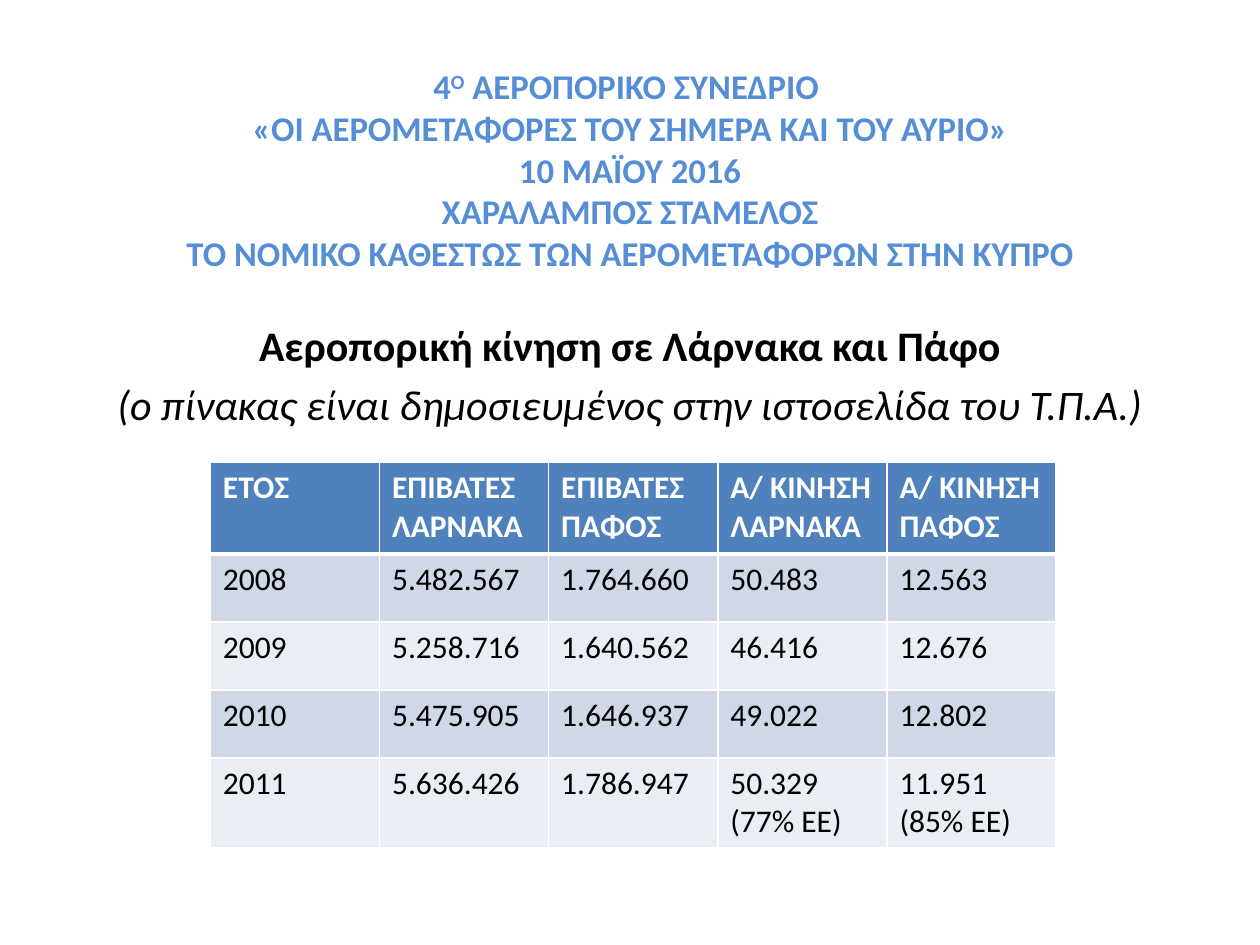
from lxml import etree
from pptx import Presentation
from pptx.dml.color import RGBColor
from pptx.enum.text import MSO_ANCHOR, MSO_AUTO_SIZE, PP_ALIGN
from pptx.oxml.ns import qn
from pptx.util import Cm, Pt

CENTER = PP_ALIGN.CENTER
NO_FIT = MSO_AUTO_SIZE.NONE
TOP, BOTTOM = MSO_ANCHOR.TOP, MSO_ANCHOR.BOTTOM

# Content: each title line is a list of (text, superscript) pieces
TITLE = [
    [("4", False), ("Ο", True), (" ΑΕΡΟΠΟΡΙΚΟ ΣΥΝΕΔΡΙΟ ", False)],
    [("«ΟΙ ΑΕΡΟΜΕΤΑΦΟΡΕΣ ΤΟΥ ΣΗΜΕΡΑ ΚΑΙ ΤΟΥ ΑΥΡΙΟ»", False)],
    [("10 ΜΑΪΟΥ 2016", False)],
    [("ΧΑΡΑΛΑΜΠΟΣ ΣΤΑΜΕΛΟΣ", False)],
    [("ΤΟ ΝΟΜΙΚΟ ΚΑΘΕΣΤΩΣ ΤΩΝ ΑΕΡΟΜΕΤΑΦΟΡΩΝ ΣΤΗΝ ΚΥΠΡΟ", False)],
]
BODY = [
    ("Αεροπορική κίνηση σε Λάρνακα και Πάφο", {"bold": True}),
    ("(ο πίνακας είναι δημοσιευμένος στην ιστοσελίδα του Τ.Π.Α.)", {"italic": True}),
]
TRAFFIC = [
    ["ΕΤΟΣ", "ΕΠΙΒΑΤΕΣ ΛΑΡΝΑΚΑ", "ΕΠΙΒΑΤΕΣ ΠΑΦΟΣ", "Α/ ΚΙΝΗΣΗ\nΛΑΡΝΑΚΑ", "Α/ ΚΙΝΗΣΗ\nΠΑΦΟΣ"],
    ["2008", "5.482.567", "1.764.660", "50.483", "12.563"],
    ["2009", "5.258.716", "1.640.562", "46.416", "12.676"],
    ["2010", "5.475.905", "1.646.937", "49.022", "12.802"],
    ["2011", "5.636.426", "1.786.947", "50.329\n(77% ΕΕ)", "11.951\n(85% ΕΕ)"],
]

# Layout in cm: left, top, width, height
TITLE_BOX = (1.27, 2.13, 22.86, 4.19)
BODY_BOX = (1.27, 6.32, 22.86, 10.69)
TABLE_BOX = (4.24, 9.32, 17.05, 7.34)
HEADER_H, ROW_H = 1.85, 1.37

# Formats
TITLE_FONT = {"name": "Calibri", "size": Pt(19.8), "bold": True}
BODY_FONT = {"name": "Calibri", "size": Pt(24)}
CELL_FONT = {"name": "Calibri", "size": Pt(18)}
BLUE, BLACK, WHITE = "558ED5", "000000", "FFFFFF"
HEADER_FILL, BANDS = "4F81BD", ("E9EDF4", "D0D8E8")


def set_color(color_format, value):
    color_format.rgb = RGBColor.from_string(value)


def format_font(font, color, values):
    for key, value in values.items():
        setattr(font, key, value)
    set_color(font.color, color)


def place(sp, box, anchor):
    sp.left, sp.top, sp.width, sp.height = map(Cm, box)
    tf = sp.text_frame
    tf.word_wrap = True
    tf.auto_size = NO_FIT
    tf.vertical_anchor = anchor
    return tf


def set_borders(cell, bottom_width):
    tcPr = cell._tc.get_or_add_tcPr()
    widths = {"lnL": 1, "lnR": 1, "lnT": 1, "lnB": bottom_width}
    for i, (tag, width) in enumerate(widths.items()):
        ln = etree.Element(qn(f"a:{tag}"), w=str(Pt(width)))
        fill = etree.SubElement(ln, qn("a:solidFill"))
        etree.SubElement(fill, qn("a:srgbClr"), val=WHITE)
        tcPr.insert(i, ln)


prs = Presentation()
prs.slide_width, prs.slide_height = Cm(25.4), Cm(19.05)
slide = prs.slides.add_slide(prs.slide_layouts[1])
title, body = slide.placeholders

# Title, five lines in one paragraph
tf = place(title, TITLE_BOX, BOTTOM)
tf.margin_bottom = Cm(0.81)
p = tf.paragraphs[0]
p.alignment = CENTER
for i, line in enumerate(TITLE):
    if i:
        p.add_line_break()
    for text, superscript in line:
        r = p.add_run()
        r.text = text
        format_font(r.font, BLUE, TITLE_FONT)
        if superscript:
            r.font._element.set("baseline", "30000")

# Table heading, centred without bullets
tf = place(body, BODY_BOX, TOP)
for i, (text, style) in enumerate(BODY):
    p = tf.add_paragraph() if i else tf.paragraphs[0]
    p.alignment = CENTER
    etree.SubElement(p._p.get_or_add_pPr(), qn("a:buNone"))
    r = p.add_run()
    r.text = text
    format_font(r.font, BLACK, {**BODY_FONT, **style})

# Traffic table
table = slide.shapes.add_table(len(TRAFFIC), len(TRAFFIC[0]), *map(Cm, TABLE_BOX)).table
for column in table.columns:
    column.width = Cm(TABLE_BOX[2] / len(TRAFFIC[0]))
for i, values in enumerate(TRAFFIC):
    header = i == 0
    table.rows[i].height = Cm(HEADER_H if header else ROW_H)
    for j, text in enumerate(values):
        cell = table.cell(i, j)
        cell.text = text
        cell.fill.solid()
        set_color(cell.fill.fore_color, HEADER_FILL if header else BANDS[i % 2])
        set_borders(cell, 3 if header else 1)
        for p in cell.text_frame.paragraphs:
            for r in p.runs:
                format_font(r.font, WHITE if header else BLACK, {**CELL_FONT, "bold": header})

prs.save("out.pptx")
